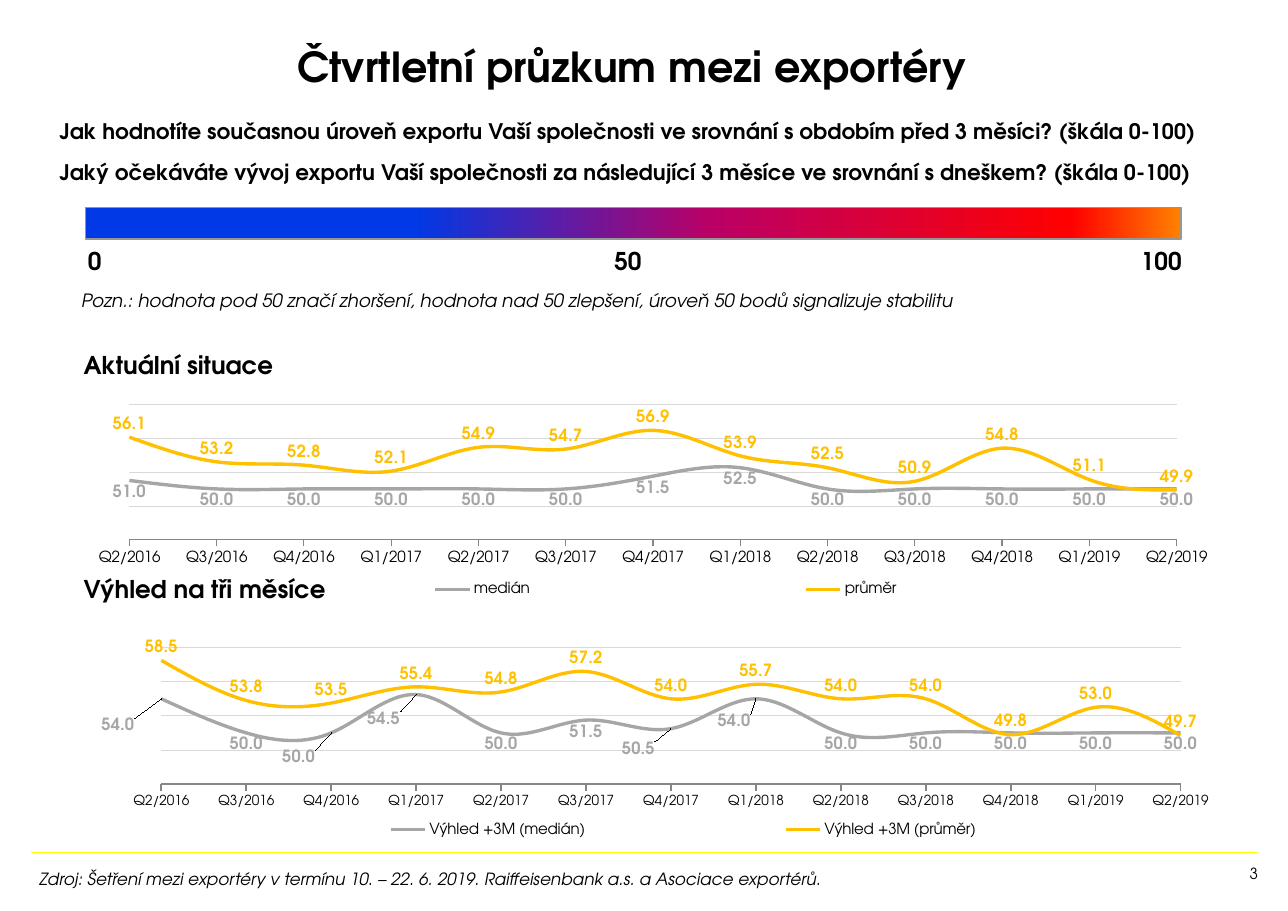
from dataclasses import dataclass

from lxml import etree
from pptx import Presentation
from pptx.chart.data import CategoryChartData
from pptx.dml.color import RGBColor
from pptx.enum import chart as charts, shapes, text
from pptx.oxml.ns import qn
from pptx.util import Inches, Pt


@dataclass(frozen=True)
class Theme:
    font: str = "TeX Gyre Adventor"
    black: str = "000000"
    rule: str = "FFFF00"
    border: str = "969696"
    grid: str = "D9D9D9"
    axis: str = "868686"
    median: str = "A6A6A6"
    mean: str = "FFC000"
    scale: tuple = ((30, "0039E5"), (57, "BA0066"), (90, "FF0000"), (100, "FF8200"))
    title_size: float = 27
    heading_size: float = 16
    question_size: float = 14
    note_size: float = 12
    label_size: float = 11
    small_size: float = 10
    axis_size: float = 9


THEME = Theme()
QUARTERS = ["Q2/2016", "Q3/2016", "Q4/2016", "Q1/2017", "Q2/2017", "Q3/2017", "Q4/2017",
            "Q1/2018", "Q2/2018", "Q3/2018", "Q4/2018", "Q1/2019", "Q2/2019"]
CURRENT = {
    "medián": [51, 50, 50, 50, 50, 50, 51.5, 52.5, 50, 50, 50, 50, 50],
    "průměr": [56.1, 53.2, 52.8, 52.1, 54.9, 54.7, 56.9, 53.9, 52.5, 50.9, 54.8, 51.1, 49.9],
}
OUTLOOK = {
    "Výhled +3M (medián)": [54, 50, 50, 54.5, 50, 51.5, 50.5, 54, 50, 50, 50, 50, 50],
    "Výhled +3M (průměr)": [58.5, 53.8, 53.5, 55.4, 54.8, 57.2, 54, 55.7, 54, 54, 49.8, 53, 49.7],
}
# Shifts of single median labels, as fractions of the chart
OUTLOOK_SHIFTS = {0: (-0.04, 0.07), 2: (-0.03, 0.06), 3: (-0.03, 0.06),
                  6: (-0.03, 0.04), 7: (-0.02, 0.05)}


def colour(value):
    return RGBColor.from_string(value)


def style_font(font, size, value=THEME.black, bold=False, italic=False):
    font.name, font.size = THEME.font, Pt(size)
    font.bold, font.italic = bold, italic
    font.color.rgb = colour(value)


def fill_frame(frame, lines, size, align=text.PP_ALIGN.LEFT, insets=(0, 0, 0, 0), **style):
    """Write one paragraph per line; insets are left, top, right, bottom."""
    frame.word_wrap = True
    frame.margin_left, frame.margin_top, frame.margin_right, frame.margin_bottom = map(Inches, insets)
    frame.text = "\n".join(lines)
    for index, para in enumerate(frame.paragraphs):
        para.alignment = align
        para.space_before = Pt(10 if index else 0)
        for span in para.runs:
            style_font(span.font, size, **style)


def add_text(page, place, lines, size, **style):
    box = page.shapes.add_textbox(*map(Inches, place))
    fill_frame(box.text_frame, lines, size, **style)


def set_title(page, words):
    title = page.shapes.title
    title.left, title.top, title.width, title.height = map(Inches, (0.64, 0.18, 10.19, 0.83))
    fill_frame(title.text_frame, [words], THEME.title_size, align=text.PP_ALIGN.CENTER, bold=True)
    title.text_frame.vertical_anchor = text.MSO_ANCHOR.MIDDLE


def add_rule(page):
    start, end, level = Inches(0.28), Inches(11.42), Inches(7.74)
    rule = page.shapes.add_connector(shapes.MSO_CONNECTOR.STRAIGHT, start, level, end, level)
    rule.line.color.rgb = colour(THEME.rule)
    rule.line.width = Pt(1)
    etree.SubElement(rule._element.spPr, qn("a:effectLst"))


def add_scale(page):
    """Add the colour bar with its marks 0, 50 and 100."""
    place = map(Inches, (0.78, 1.88, 9.94, 0.29))
    bar = page.shapes.add_shape(shapes.MSO_SHAPE.RECTANGLE, *place)
    bar.shadow.inherit = False
    bar.line.color.rgb = colour(THEME.border)
    bar.line.width = Pt(0.75)
    bar.fill.gradient()
    bar.fill.gradient_angle = 0
    stops = bar._element.spPr.find(".//" + qn("a:gsLst"))
    for stop in list(stops):
        stops.remove(stop)
    for percent, value in THEME.scale:
        stop = etree.SubElement(stops, qn("a:gs"), pos=str(percent * 1000))
        etree.SubElement(stop, qn("a:srgbClr"), val=value)
    for index, mark in enumerate(("0", "50", "100")):
        add_text(page, (0.46 + 4.84 * index, 2.23, 0.8, 0.28), [mark], THEME.heading_size,
                 align=text.PP_ALIGN.CENTER, bold=True)


def manual_layout(**values):
    layout = etree.Element(qn("c:layout"))
    manual = etree.SubElement(layout, qn("c:manualLayout"))
    for name, value in values.items():
        etree.SubElement(manual, qn("c:" + name), val=str(value))
    return layout


def set_layout(parent, index, **values):
    for old in parent.findall(qn("c:layout")):
        parent.remove(old)
    parent.insert(index, manual_layout(**values))


def style_axes(chart, axis_size, axis_width):
    quarters, values = chart.category_axis, chart.value_axis
    style_font(quarters.tick_labels.font, axis_size)
    quarters.major_tick_mark = charts.XL_TICK_MARK.OUTSIDE
    quarters.has_major_gridlines = False
    quarters.format.line.color.rgb = colour(THEME.axis)
    quarters.format.line.width = Pt(axis_width)
    values.visible = False
    values.minimum_scale, values.maximum_scale, values.major_unit = 44, 60, 4
    values.has_major_gridlines = True
    values.major_gridlines.format.line.color.rgb = colour(THEME.grid)
    values.major_gridlines.format.line.width = Pt(0.5)
    axis = values._element
    for old in axis.findall(qn("c:crossBetween")):
        axis.remove(old)
    between = etree.Element(qn("c:crossBetween"), val="midCat")
    axis.find(qn("c:crosses")).addnext(between)


def style_series(series, value, position):
    series.smooth = True
    series.format.line.color.rgb = colour(value)
    series.format.line.width = Pt(2.25)
    labels = series.data_labels
    labels.show_value = True
    labels.number_format, labels.number_format_is_linked = "0.0", False
    labels.position = position
    style_font(labels.font, THEME.label_size, value, bold=True)


def shift_label(series, index, shift):
    label = series.points[index].data_label
    label.position = charts.XL_LABEL_POSITION.BELOW
    style_font(label.font, THEME.label_size, THEME.median, bold=True)
    element = series.data_labels._element.find(f"{qn('c:dLbl')}[{qn('c:idx')}]")
    for element in series.data_labels._element.findall(qn("c:dLbl")):
        if element.find(qn("c:idx")).get("val") == str(index):
            set_layout(element, 1, x=shift[0], y=shift[1])
            element.insert(2, etree.Element(qn("c:numFmt"), formatCode="0.0", sourceLinked="0"))


def add_line_chart(page, place, rows, plot_height, legend_top, axis_size, axis_width, shifts):
    data = CategoryChartData(number_format="0.0")
    data.categories = QUARTERS
    for name, values in rows.items():
        data.add_series(name, values)
    chart = page.shapes.add_chart(charts.XL_CHART_TYPE.LINE, *map(Inches, place), data).chart
    chart.has_title = False
    style_font(chart.font, THEME.small_size)
    style_axes(chart, axis_size, axis_width)
    chart.plots[0].vary_by_categories = False
    median, mean = chart.plots[0].series
    style_series(median, THEME.median, charts.XL_LABEL_POSITION.BELOW)
    style_series(mean, THEME.mean, charts.XL_LABEL_POSITION.ABOVE)
    for index, shift in shifts.items():
        shift_label(median, index, shift)
    chart.has_legend = True
    chart.legend.position = charts.XL_LEGEND_POSITION.BOTTOM
    chart.legend.include_in_layout = False
    style_font(chart.legend.font, THEME.small_size)
    set_layout(chart.legend._element, 1, xMode="edge", yMode="edge",
               x=0.07, y=legend_top, w=0.9, h=0.1)
    set_layout(chart._chartSpace.find(".//" + qn("c:plotArea")), 0, layoutTarget="inner",
               xMode="edge", yMode="edge", x=0.039, y=0.081, w=0.939, h=plot_height)


def main():
    deck = Presentation()
    deck.slide_width, deck.slide_height = Inches(11.69), Inches(8.27)
    page = deck.slides.add_slide(deck.slide_layouts[5])
    add_rule(page)
    set_title(page, "Čtvrtletní průzkum mezi exportéry")
    add_text(page, (0.42, 0.91, 10.86, 0.9), [
        "Jak hodnotíte současnou úroveň exportu Vaší společnosti ve srovnání s obdobím před 3 měsíci? (škála 0-100)",
        "Jaký očekáváte vývoj exportu Vaší společnosti za následující 3 měsíce ve srovnání s dneškem? (škála 0-100)",
    ], THEME.question_size, insets=(0.12, 0.16, 0.12, 0), bold=True)
    add_scale(page)
    add_text(page, (0.64, 2.58, 10.84, 0.3), [
        "Pozn.: hodnota pod 50 značí zhoršení, hodnota nad 50 zlepšení, úroveň 50 bodů signalizuje stabilitu",
    ], THEME.note_size, insets=(0.1, 0.05, 0.1, 0.05), italic=True)
    for top, heading in ((3.18, "Aktuální situace"), (5.21, "Výhled na tři měsíce")):
        add_text(page, (0.76, top, 2.4, 0.3), [heading], THEME.heading_size, bold=True)
    add_line_chart(page, (0.78, 3.5, 10.19, 2.08), CURRENT, 0.593, 0.84,
                   THEME.small_size, 0.75, {})
    add_line_chart(page, (0.92, 5.72, 10.05, 1.97), OUTLOOK, 0.629, 0.87,
                   THEME.axis_size, 1.25, OUTLOOK_SHIFTS)
    add_text(page, (0.26, 7.84, 9.94, 0.29), [
        "Zdroj: Šetření mezi exportéry v\u00a0termínu 10. – 22. 6. 2019. Raiffeisenbank a.s. a Asociace exportérů.",
    ], THEME.label_size, insets=(0.1, 0.05, 0.1, 0.05), italic=True)
    add_text(page, (6.76, 7.85, 4.66, 0.3), ["3"], THEME.small_size, align=text.PP_ALIGN.RIGHT)
    deck.save("out.pptx")


if __name__ == "__main__":
    main()
